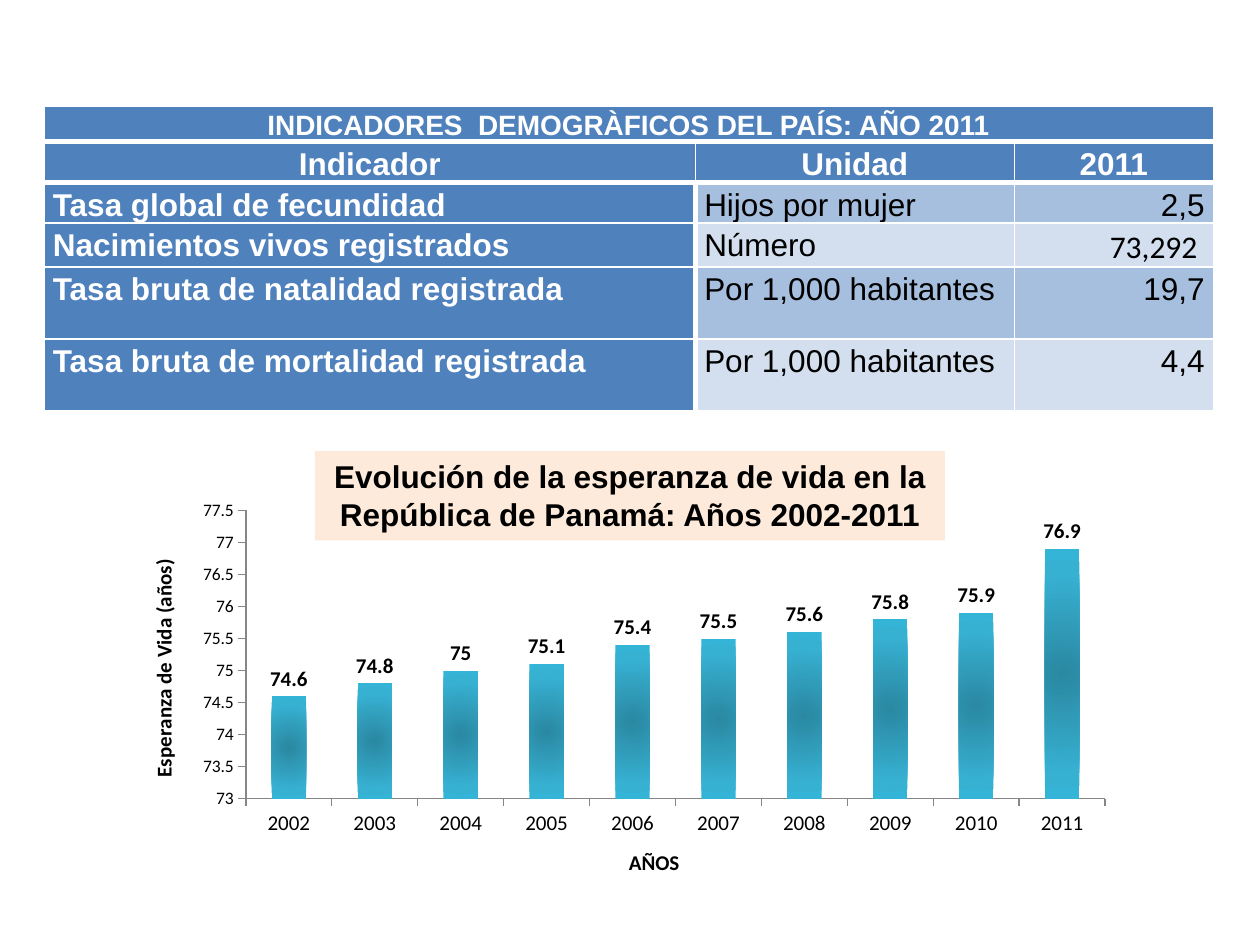
import lxml.etree
import pptx
import pptx.chart.data
import pptx.dml.color
import pptx.enum.chart
import pptx.enum.shapes
import pptx.enum.text
import pptx.oxml
import pptx.oxml.ns
import pptx.util

Inches = pptx.util.Inches
Pt = pptx.util.Pt
ALIGN = pptx.enum.text.PP_ALIGN
qn = pptx.oxml.ns.qn
NAMESPACE = 'xmlns:a="http://schemas.openxmlformats.org/drawingml/2006/main"'


def color(hex_string):
    return pptx.dml.color.RGBColor.from_string(hex_string)


def format_font(font, values):
    """Set font attributes from a dict; "color" is a hex string."""
    for name, value in values.items():
        if name == "color":
            font.color.rgb = color(value)
        else:
            setattr(font, name, value)


presentation = pptx.Presentation()
presentation.slide_width = Inches(10)
presentation.slide_height = Inches(7.5)
slide = presentation.slides.add_slide(presentation.slide_layouts[6])

# Table of demographic indicators
rows = [
    ["INDICADORES  DEMOGRÀFICOS DEL PAÍS: AÑO 2011", "", ""],
    ["Indicador", "Unidad", "2011"],
    ["Tasa global de fecundidad", "Hijos por mujer", "2,5"],
    ["Nacimientos vivos registrados", "Número", "73,292 "],
    ["Tasa bruta de natalidad registrada", "Por 1,000 habitantes", "19,7"],
    ["Tasa bruta de mortalidad registrada", "Por 1,000 habitantes", "4,4"],
]
column_widths = [5.17, 2.53, 1.58]
row_heights = [0.25, 0.28, 0.28, 0.28, 0.57, 0.57]
table = slide.shapes.add_table(
    len(rows), len(column_widths), Inches(0.35), Inches(0.84),
    Inches(sum(column_widths)), Inches(sum(row_heights))).table
for column, width in zip(table.columns, column_widths):
    column.width = Inches(width)
for row, height in zip(table.rows, row_heights):
    row.height = Inches(height)
table.cell(0, 0).merge(table.cell(0, 2))

for r, texts in enumerate(rows):
    for c, text in enumerate(texts):
        cell = table.cell(r, c)
        cell.margin_left = cell.margin_right = Inches(0.07)
        cell.margin_top = cell.margin_bottom = 0
        heading = r < 2 or c == 0
        band = "A7BFDE" if r % 2 == 0 else "D3DFEE"
        cell.fill.solid()
        cell.fill.fore_color.rgb = color("4F81BD" if heading else band)

        # Thick rules below the two heading rows and beside the first column
        border_widths = {
            "lnL": 3 if r >= 2 and c == 1 else 1,
            "lnR": 3 if r >= 2 and c == 0 else 1,
            "lnT": 3 if r in (1, 2) else 1,
            "lnB": 3 if r < 2 else 1,
        }
        for index, (side, width) in enumerate(border_widths.items()):
            border = pptx.oxml.parse_xml(
                f'<a:{side} {NAMESPACE} w="{Pt(width)}"><a:solidFill>'
                f'<a:srgbClr val="FFFFFF"/></a:solidFill></a:{side}>')
            cell._tc.get_or_add_tcPr().insert(index, border)

        if not text:
            continue
        paragraph = cell.text_frame.paragraphs[0]
        paragraph.line_spacing = 1.15
        if r < 2:
            paragraph.alignment = ALIGN.CENTER
        else:
            paragraph.alignment = ALIGN.RIGHT if c == 2 else ALIGN.LEFT
        run = paragraph.add_run()
        run.text = text
        format_font(run.font, {
            "name": "Calibri" if (r, c) == (3, 2) else "Arial",
            "size": Pt(16 if r == 0 else 18),
            "bold": heading,
            "color": "FFFFFF" if heading else "000000",
        })

# Life expectancy chart
chart_data = pptx.chart.data.CategoryChartData()
chart_data.categories = [str(year) for year in range(2002, 2012)]
chart_data.add_series("Esperanza de vida", [
    74.6, 74.8, 75, 75.1, 75.4, 75.5, 75.6, 75.8, 75.9, 76.9])
chart = slide.shapes.add_chart(
    pptx.enum.chart.XL_CHART_TYPE.COLUMN_CLUSTERED,
    Inches(1), Inches(3.92), Inches(7.93), Inches(3.27), chart_data).chart
chart.has_legend = False
chart.has_title = False
chart_font = {"name": "Calibri", "size": Pt(10), "color": "000000"}
strong_font = chart_font | {"size": Pt(12), "bold": True}
format_font(chart.font, chart_font)

value_axis = chart.value_axis
value_axis.minimum_scale = 73
value_axis.maximum_scale = 77.5
value_axis.major_unit = 0.5
value_axis.has_major_gridlines = False
for axis, title, size in [(chart.category_axis, "AÑOS", 12),
                          (value_axis, "Esperanza de Vida (años)", 10)]:
    axis.major_tick_mark = pptx.enum.chart.XL_TICK_MARK.OUTSIDE
    axis.format.line.color.rgb = color("868686")
    axis.format.line.width = Pt(0.75)
    format_font(axis.tick_labels.font, chart_font | {"size": Pt(size)})
    run = axis.axis_title.text_frame.paragraphs[0].add_run()
    run.text = title
    format_font(run.font, strong_font)

plot = chart.plots[0]
plot.gap_width = 150
plot.vary_by_categories = False
plot.has_data_labels = True
labels = plot.data_labels
labels.show_value = True
labels.number_format = "General"
labels.number_format_is_linked = False
labels.position = pptx.enum.chart.XL_LABEL_POSITION.OUTSIDE_END
format_font(labels.font, strong_font)

# Radial gradient of the columns
stops = "".join(
    f'<a:gs pos="{position * 1000}"><a:srgbClr val="{stop}"/></a:gs>'
    for position, stop in [(0, "2A88A2"), (80, "37B1D2"), (100, "34B4D6")])
gradient = pptx.oxml.parse_xml(
    f'<a:gradFill {NAMESPACE} rotWithShape="1"><a:gsLst>{stops}</a:gsLst>'
    '<a:path path="circle"><a:fillToRect l="50000" t="50000" r="50000" b="50000"/>'
    '</a:path></a:gradFill>')
plot.series[0].format.fill.background()
series_properties = plot.series[0]._element.find(qn("c:spPr"))
series_properties.replace(series_properties.find(qn("a:noFill")), gradient)

# Inner plot area as fractions of the chart
plot_area = chart._chartSpace.find(".//" + qn("c:plotArea"))
layout = plot_area.find(qn("c:layout"))
if layout is None:
    layout = lxml.etree.Element(qn("c:layout"))
    plot_area.insert(0, layout)
manual_layout = lxml.etree.SubElement(layout, qn("c:manualLayout"))
for name, value in {"layoutTarget": "inner", "xMode": "edge", "yMode": "edge",
                    "x": 0.12, "y": 0.04, "w": 0.86, "h": 0.7}.items():
    lxml.etree.SubElement(manual_layout, qn("c:" + name), val=str(value))

# Chart heading
heading_box = slide.shapes.add_shape(
    pptx.enum.shapes.MSO_SHAPE.RECTANGLE,
    Inches(2.5), Inches(3.58), Inches(5), Inches(0.71))
heading_box.shadow.inherit = False
heading_box.fill.solid()
heading_box.fill.fore_color.rgb = color("FDEADA")
heading_box.line.fill.background()
heading_box.text_frame.word_wrap = True
heading_box.text_frame.vertical_anchor = pptx.enum.text.MSO_ANCHOR.TOP
paragraph = heading_box.text_frame.paragraphs[0]
paragraph.alignment = ALIGN.CENTER
run = paragraph.add_run()
run.text = "Evolución de la esperanza de vida en la República de Panamá: Años 2002-2011"
format_font(run.font, {
    "name": "Arial", "size": Pt(18), "bold": True, "color": "000000"})

presentation.save("out.pptx")
